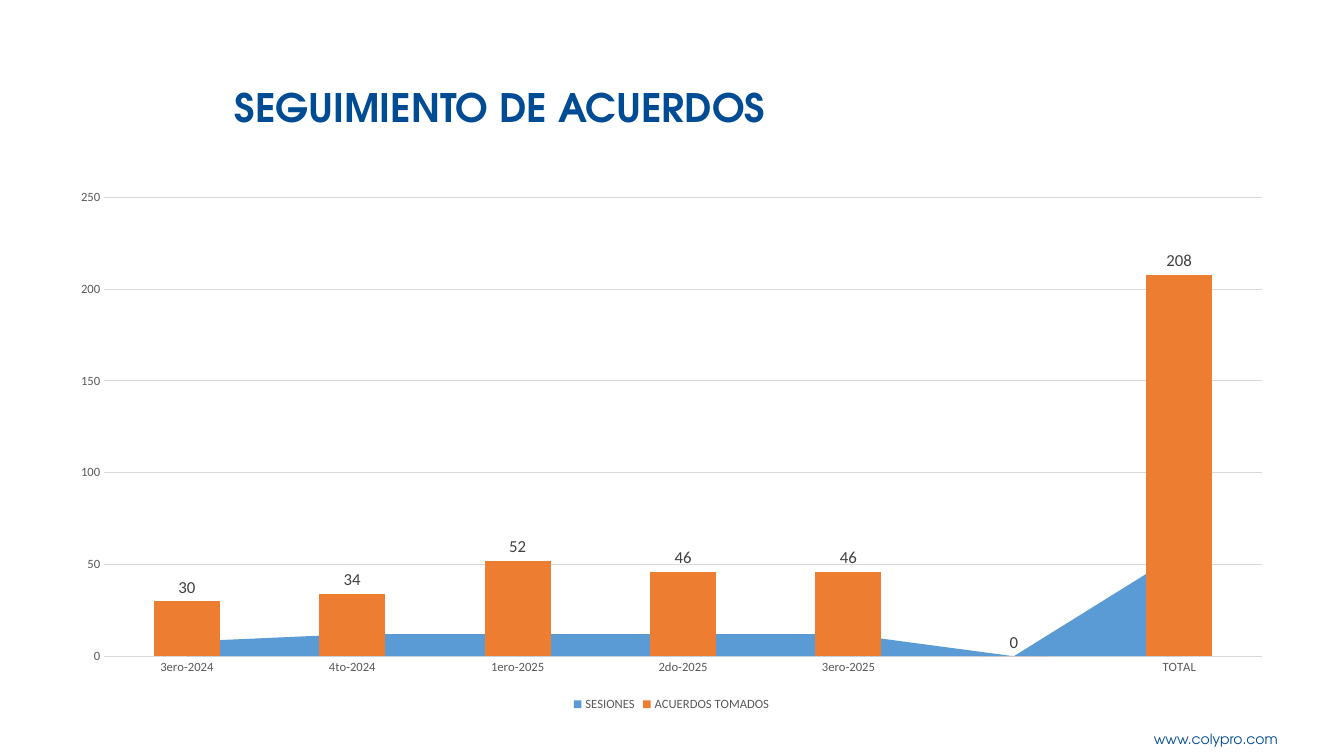
from lxml import etree
from pptx import Presentation
from pptx.chart.data import CategoryChartData
from pptx.dml.color import RGBColor
from pptx.enum.chart import (XL_CHART_TYPE as CT, XL_LABEL_POSITION as LP,
                             XL_LEGEND_POSITION as LEG, XL_TICK_MARK as TICK)
from pptx.enum.text import MSO_ANCHOR as ANCHOR, PP_ALIGN as ALIGN
from pptx.oxml.ns import qn
from pptx.util import Inches, Pt

W, H = 13.33, 7.5
MARGIN = 0.56
BLUE, GREY, RULE = "004C94", "595959", "D9D9D9"
HEAD_FONT, CHART_FONT = "TeX Gyre Adventor", "Calibri"
CATEGORIES = ["3ero-2024", "4to-2024", "1ero-2025", "2do-2025", "3ero-2025", "", "TOTAL"]
SERIES = [("SESIONES", (8, 12, 12, 12, 12, None, 56), "5B9BD5"),
          ("ACUERDOS TOMADOS", (30, 34, 52, 46, 46, None, 208), "ED7D31")]


def rgb(value):
    return RGBColor.from_string(value)


def set_font(font, color, **values):
    for name, value in values.items():
        setattr(font, name, value)
    font.color.rgb = rgb(color)


def place(sp, box):
    for name, value in zip(("left", "top", "width", "height"), box):
        setattr(sp, name, Inches(value))


def write(sp, box, text, align, **font):
    place(sp, box)
    tf = sp.text_frame
    frame = dict(word_wrap=True, vertical_anchor=ANCHOR.MIDDLE)
    for name, value in frame.items():
        setattr(tf, name, value)
    p = tf.paragraphs[0]
    p.alignment = align
    r = p.add_run()
    r.text = text
    set_font(r.font, BLUE, name=HEAD_FONT, **font)
    return p


def move_to_area(bar_plot, ser):
    """Draw one column series as a stacked area behind the columns."""
    area = etree.Element(qn("c:areaChart"))
    etree.SubElement(area, qn("c:grouping")).set("val", "stacked")
    etree.SubElement(area, qn("c:varyColors")).set("val", "0")
    for node in ser.findall(qn("c:invertIfNegative")):
        ser.remove(node)
    area.append(ser)
    for axis in bar_plot.findall(qn("c:axId")):
        etree.SubElement(area, qn("c:axId")).set("val", axis.get("val"))
    bar_plot.addprevious(area)


def centre_categories(value_axis):
    """Keep half a category of room at both ends of the plot."""
    ax = value_axis._element
    for node in ax.findall(qn("c:crossBetween")):
        ax.remove(node)
    between = etree.Element(qn("c:crossBetween"))
    between.set("val", "between")
    ax.find(qn("c:crosses")).addnext(between)


def show_blanks_as_zero(chart):
    for node in chart._chartSpace.iter(qn("c:dispBlanksAs")):
        node.set("val", "zero")


def style_axes(chart):
    category, value = chart.category_axis, chart.value_axis
    for axis in (category, value):
        axis.major_tick_mark = axis.minor_tick_mark = TICK.NONE
        set_font(axis.tick_labels.font, GREY, size=Pt(9), name=CHART_FONT)
    value.minimum_scale, value.maximum_scale, value.major_unit = 0, 250, 50
    value.has_major_gridlines = True
    value.format.line.fill.background()
    for line in (category.format.line, value.major_gridlines.format.line):
        line.color.rgb = rgb(RULE)
        line.width = Pt(0.75)
    centre_categories(value)


def add_agreements_chart(s, box):
    data = CategoryChartData()
    data.categories = CATEGORIES
    for name, values, _ in SERIES:
        data.add_series(name, values)
    chart = s.shapes.add_chart(CT.COLUMN_CLUSTERED, *map(Inches, box), data).chart
    chart.has_title = False
    set_font(chart.font, "000000", size=Pt(10), name=CHART_FONT)
    style_axes(chart)
    show_blanks_as_zero(chart)

    # Legend
    chart.has_legend = True
    chart.legend.position = LEG.BOTTOM
    chart.legend.include_in_layout = False
    set_font(chart.legend.font, GREY, size=Pt(9), name=CHART_FONT)

    # Series: sessions as area, agreements as labelled columns
    plot = chart.plots[0]
    plot.vary_by_categories = False
    plot.gap_width = 150
    sessions, agreements = plot.series
    for ser, (_, _, color) in zip((sessions, agreements), SERIES):
        ser.format.fill.solid()
        ser.format.fill.fore_color.rgb = rgb(color)
    labels = agreements.data_labels
    labels.show_value = True
    labels.position = LP.OUTSIDE_END
    set_font(labels.font, "404040", size=Pt(12), name=CHART_FONT)
    move_to_area(agreements._element.getparent(), sessions._element)


def build_slide(prs):
    s = prs.slides.add_slide(prs.slide_layouts[5])
    # Footer address
    footer = s.shapes.add_textbox(0, 0, 0, 0)
    write(footer, (10.49, 7.2, 2.28, 0.27), "www.colypro.com", ALIGN.RIGHT, size=Pt(10))
    # Title
    p = write(s.shapes.title, (MARGIN, 0.79, 8.8, 0.59), "SEGUIMIENTO DE ACUERDOS",
              ALIGN.CENTER, size=Pt(28), bold=True)
    p.line_spacing = 0.9
    # Chart
    add_agreements_chart(s, (MARGIN, 1.78, 12.2, 5.32))


def main():
    prs = Presentation()
    prs.slide_width, prs.slide_height = Inches(W), Inches(H)
    build_slide(prs)
    prs.save("out.pptx")


if __name__ == "__main__":
    main()
